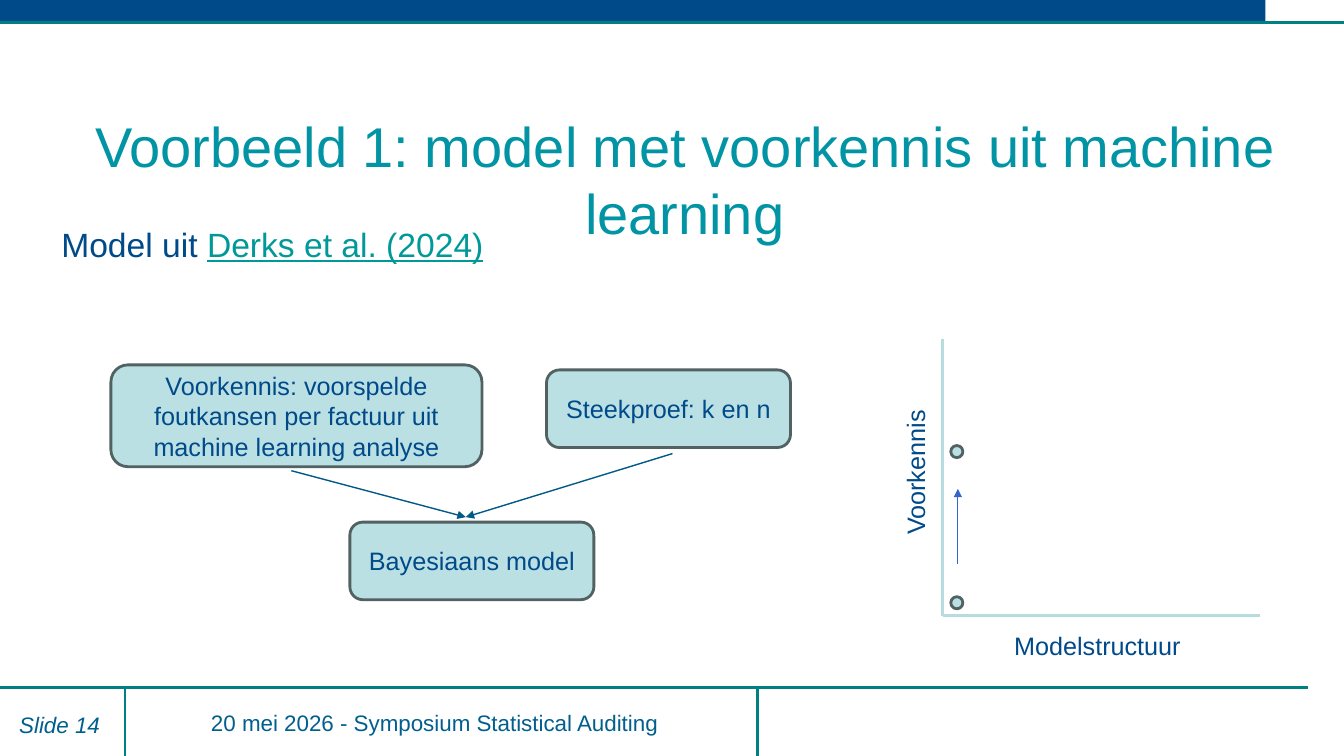
from lxml import etree
from pptx import Presentation
from pptx.dml.color import RGBColor
from pptx.enum.shapes import MSO_CONNECTOR, MSO_SHAPE
from pptx.enum.text import MSO_ANCHOR, MSO_AUTO_SIZE, PP_ALIGN
from pptx.oxml.ns import qn
from pptx.util import Emu, Pt

LINE = MSO_CONNECTOR.STRAIGHT
RECT, ROUND, OVAL = MSO_SHAPE.RECTANGLE, MSO_SHAPE.ROUNDED_RECTANGLE, MSO_SHAPE.OVAL
TOP, MIDDLE = MSO_ANCHOR.TOP, MSO_ANCHOR.MIDDLE
LEFT, CENTER, RIGHT = PP_ALIGN.LEFT, PP_ALIGN.CENTER, PP_ALIGN.RIGHT
FIXED = MSO_AUTO_SIZE.NONE

HUES = {
    "navy": "004A8A", "frame": "008080", "title": "0094A4", "foot": "005F8E",
    "link": "009999", "axis": "B6DCDF", "box": "BBE0E3", "edge": "526263",
    "flow": "005986", "rise": "3366CC",
}


def px(num):
    return Emu(num * 9144)


def hue(name):
    return RGBColor.from_string(HUES[name])


class Board:
    """Holds the type style and the current slide, and draws each kind of element."""

    def __init__(self, slide, face):
        self.slide = slide
        self.face = face

    def label(self, shape, runs, size, align=LEFT, anchor=TOP, wrap=True, **extra):
        frame = shape.text_frame
        look = {"auto_size": FIXED, "word_wrap": wrap, "vertical_anchor": anchor}
        for key, val in look.items():
            setattr(frame, key, val)
        para = frame.paragraphs[0]
        para.alignment = align
        for text, tone, under in runs:
            run = para.add_run()
            run.text = text
            form = {"name": self.face, "size": Pt(size), "underline": under, **extra}
            for key, val in form.items():
                setattr(run.font, key, val)
            run.font.color.rgb = hue(tone)

    def title(self, text, spot):
        shape = self.slide.shapes.title
        for key, val in zip(("left", "top", "width", "height"), spot):
            setattr(shape, key, px(val))
        self.label(shape, [(text, "title", None)], 40, CENTER, MIDDLE)

    def text(self, spot, runs, size, turn=0, **look):
        shape = self.slide.shapes.add_textbox(*map(px, spot))
        shape.rotation = turn
        self.label(shape, runs, size, **look)

    def shape(self, kind, spot, fill, edge=None):
        shape = self.slide.shapes.add_shape(kind, *map(px, spot))
        shape.shadow.inherit = False
        shape.fill.solid()
        shape.fill.fore_color.rgb = hue(fill)
        if edge:
            shape.line.color.rgb = hue(edge)
            shape.line.width = Pt(2)
        else:
            shape.line.fill.background()
        return shape

    def node(self, spot, text):
        shape = self.shape(ROUND, spot, "box", "edge")
        self.label(shape, [(text, "navy", None)], 18, CENTER, MIDDLE)

    def line(self, ends, tone, width, arrow=False):
        line = self.slide.shapes.add_connector(LINE, *map(px, ends))
        line.line.color.rgb = hue(tone)
        line.line.width = Pt(width)
        props = line.element.spPr
        if arrow:
            etree.SubElement(props.find(qn("a:ln")), qn("a:tailEnd"), type="triangle")
        etree.SubElement(props, qn("a:effectLst"))


def main():
    deck = Presentation()
    deck.slide_width, deck.slide_height = px(1333), px(750)
    board = Board(deck.slides.add_slide(deck.slide_layouts[5]), "Arial")

    board.shape(RECT, (0, 0, 1255, 23), "navy")
    for ends in ((0, 22, 1333, 22), (0, 682, 1297, 682),
                 (124, 682, 124, 750), (751, 682, 751, 750)):
        board.line(ends, "frame", 2)

    board.title("Voorbeeld 1: model met voorkennis uit machine learning",
                (49, 127, 1260, 101))
    board.text((51, 217, 810, 50), [("Model uit ", "navy", None),
                                    ("Derks et al. (2024)", "link", True)], 24)
    board.text((107, 699, 648, 36),
               [("20 mei 2026 - Symposium Statistical Auditing", "foot", None)],
               16, align=CENTER)
    board.text((0, 701, 109, 34), [("Slide 14", "foot", None)],
               16, align=RIGHT, italic=True)

    for ends in ((935, 336, 935, 611), (935, 611, 1250, 611)):
        board.line(ends, "axis", 2.25)
    for spot, name, turn in (((835, 448, 145, 40), "Voorkennis", 270),
                             ((996, 620, 187, 40), "Modelstructuur", 0)):
        board.text(spot, [(name, "navy", None)], 18, turn, wrap=False)
    for top in (442, 592):
        board.shape(OVAL, (943, top, 12, 12), "box", "edge")
    board.line((950, 560, 950, 485), "rise", 0.75, True)

    board.node((110, 362, 368, 101),
               "Voorkennis: voorspelde foutkansen per factuur uit machine learning analyse")
    board.node((542, 367, 242, 77), "Steekproef: k en n")
    board.node((347, 518, 242, 77), "Bayesiaans model")
    for start in ((667, 450), (289, 467)):
        board.line((*start, 462, 513), "flow", 1, True)

    deck.save("out.pptx")


if __name__ == "__main__":
    main()
